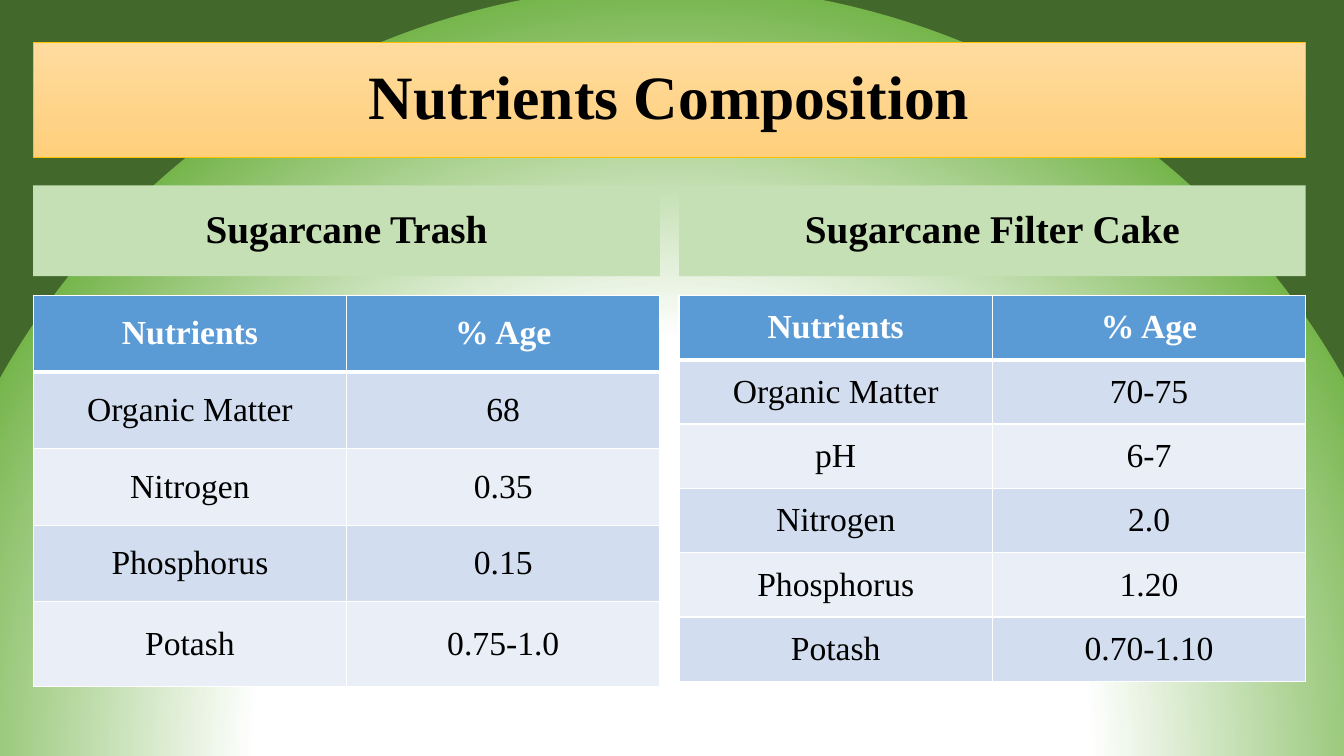
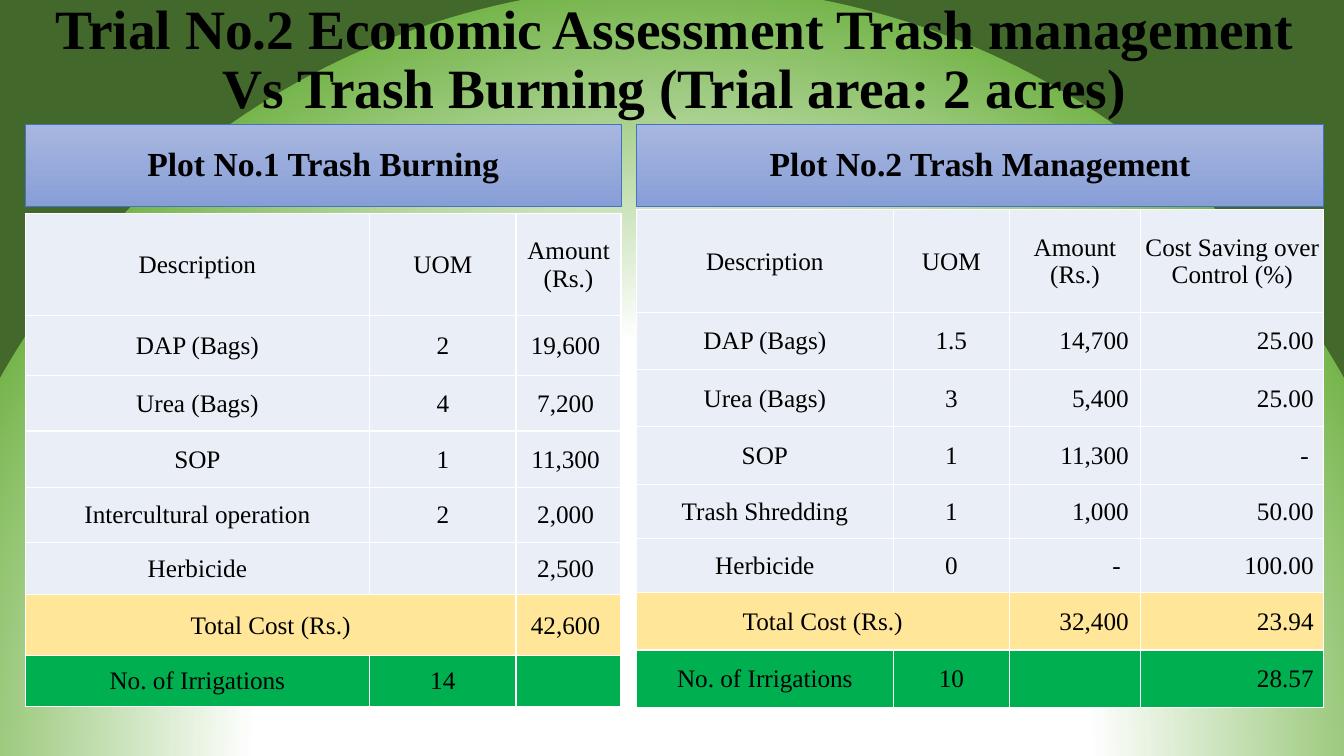
from dataclasses import dataclass
from lxml import etree
from pptx import Presentation
from pptx.dml.color import RGBColor
from pptx.enum.shapes import MSO_SHAPE as Shape
from pptx.enum.text import MSO_ANCHOR as Anchor, PP_ALIGN as Align
from pptx.oxml import parse_xml
from pptx.util import Inches, Pt

W, H = 13.33, 7.5
FONT = "Times New Roman"
BLACK, WHITE = "000000", "FFFFFF"
HEADER_BLUE, BAND_BLUE, PALE_BLUE = "5B9BD5", "D2DEEF", "EAEFF7"
TOTAL_YELLOW, IRRIGATION_GREEN, LEAF = "FFE699", "00B050", "C5E0B4"
ORANGE_FADE, BLUE_FADE = ("FFDB9E", "FFD07C"), ("A8B7DF", "889ED7")
GOLD_LINE, BLUE_LINE = "FFC000", "4472C4"
NS_A = "http://schemas.openxmlformats.org/drawingml/2006/main"
NS_P = "http://schemas.openxmlformats.org/presentationml/2006/main"


@dataclass
class Box:
    x: float
    y: float
    w: float
    h: float

    def inches(self):
        return [Inches(v) for v in (self.x, self.y, self.w, self.h)]

    def split(self, gap, left_share=0.5):
        """Two boxes side by side with a gap between them."""
        left = (self.w - gap) * left_share
        right = self.w - gap - left
        return (Box(self.x, self.y, left, self.h),
                Box(self.x + left + gap, self.y, right, self.h))


@dataclass
class Column:
    weight: float
    align: Align = Align.CENTER
    right_margin: float = 0.01
    dash_margin: float = 0.01


def color(hex_code):
    return RGBColor.from_string(hex_code)


def set_background(master):
    """Green halo around a white centre, shared by every slide."""
    stops = "".join(
        f'<a:gs pos="{pos}000"><a:srgbClr val="{tone}">{alpha}</a:srgbClr></a:gs>'
        for pos, tone, alpha in ((54, WHITE, '<a:alpha val="70000"/>'),
                                 (100, "76B54C", ""), (100, "43682B", "")))
    halo = parse_xml(
        f'<a:gradFill xmlns:a="{NS_A}" rotWithShape="1"><a:gsLst>{stops}</a:gsLst>'
        '<a:path path="circle"><a:fillToRect l="50000" t="130000" r="50000" '
        'b="-30000"/></a:path></a:gradFill>')
    master.background.fill.solid()
    bg_pr = master.element.find(f".//{{{NS_P}}}bgPr")
    bg_pr.replace(bg_pr[0], halo)


def write(frame, text, size, tone=BLACK, bold=False, align=Align.CENTER, spacing=None):
    paragraph = frame.paragraphs[0]
    paragraph.text = text
    paragraph.alignment = align
    paragraph.line_spacing = spacing
    font = paragraph.font
    font.name, font.size, font.bold = FONT, Pt(size), bold
    font.color.rgb = color(tone)


def add_band(slide, box, text, size, fill=None, line=None):
    """Bold centred heading; fill is one colour, a pair to fade, or None."""
    band = slide.shapes.add_shape(Shape.RECTANGLE, *box.inches())
    band.shadow.inherit = False
    if fill is None:
        band.fill.background()
    elif isinstance(fill, tuple):
        band.fill.gradient()
        band.fill.gradient_angle = 270
        for stop, tone in zip(band.fill.gradient_stops, fill):
            stop.color.rgb = color(tone)
    else:
        band.fill.solid()
        band.fill.fore_color.rgb = color(fill)
    if line:
        band.line.color.rgb = color(line)
        band.line.width = Pt(0.5)
    else:
        band.line.fill.background()
    frame = band.text_frame
    frame.word_wrap = True
    frame.vertical_anchor = Anchor.MIDDLE
    write(frame, text, size, bold=True, spacing=0.9)


def style_cell(cell, fill, top=1, bottom=1):
    """White cell borders, then the fill."""
    tc_pr = cell._tc.get_or_add_tcPr()
    for side, width in (("L", 1), ("R", 1), ("T", top), ("B", bottom)):
        edge = etree.SubElement(tc_pr, f"{{{NS_A}}}ln{side}", w=str(Pt(width)))
        solid = etree.SubElement(edge, f"{{{NS_A}}}solidFill")
        etree.SubElement(solid, f"{{{NS_A}}}srgbClr", val=WHITE)
    cell.fill.solid()
    cell.fill.fore_color.rgb = color(fill)
    cell.vertical_anchor = Anchor.MIDDLE


def add_grid(slide, box, rows, col_weights, row_weights):
    """Plain table whose columns and rows share out the box."""
    table = slide.shapes.add_table(len(rows), len(col_weights), *box.inches()).table
    table.first_row = table.horz_banding = False
    for column, weight in zip(table.columns, col_weights):
        column.width = Inches(box.w * weight / sum(col_weights))
    for row, weight in zip(table.rows, row_weights):
        row.height = Inches(box.h * weight / sum(row_weights))
    return table


def add_nutrient_table(slide, box, rows, row_weights):
    table = add_grid(slide, box, rows, (1, 1), row_weights)
    for r, row in enumerate(rows):
        header = r == 0
        fill = HEADER_BLUE if header else (PALE_BLUE, BAND_BLUE)[r % 2]
        for c, text in enumerate(row):
            cell = table.cell(r, c)
            style_cell(cell, fill, top=3 if r == 1 else 1, bottom=3 if header else 1)
            write(cell.text_frame, text, 24, WHITE if header else BLACK, header)


def add_cost_table(slide, box, rows, columns, row_weights):
    table = add_grid(slide, box, rows, [col.weight for col in columns], row_weights)
    total, irrigation = len(rows) - 2, len(rows) - 1
    fills = {total: TOTAL_YELLOW, irrigation: IRRIGATION_GREEN}
    for r, row in enumerate(rows):
        for c, (text, column) in enumerate(zip(row, columns)):
            cell = table.cell(r, c)
            style_cell(cell, fills.get(r, PALE_BLUE))
            right, align = column.right_margin, column.align
            if r == 0:
                right, align = 0.01, Align.CENTER
            elif text == "-":
                right = column.dash_margin
            cell.margin_left = cell.margin_top = Inches(0.01)
            cell.margin_right, cell.margin_bottom = Inches(right), 0
            write(cell.text_frame, text, 18, align=align)
    table.cell(total, 0).merge(table.cell(total, 1))


def below(box, heading_h, gap, height):
    """Heading box and the table box under it."""
    return (Box(box.x, box.y, box.w, heading_h),
            Box(box.x, box.y + heading_h + gap, box.w, height))


def build_nutrients(slide):
    area = Box(0.33, 1.84, W - 0.71, 4.96)
    add_band(slide, Box(area.x, 0.42, area.w, 1.14), "Nutrients Composition", 44,
             ORANGE_FADE, GOLD_LINE)
    head = ("Nutrients", "% Age")
    panels = (
        ("Sugarcane Trash", 3.88, (0.76, 0.76, 0.76, 0.76, 0.84),
         [head, ("Organic Matter", "68"), ("Nitrogen", "0.35"),
          ("Phosphorus", "0.15"), ("Potash", "0.75-1.0")]),
        ("Sugarcane Filter Cake", 3.83, (1,) * 6,
         [head, ("Organic Matter", "70-75"), ("pH", "6-7"), ("Nitrogen", "2.0"),
          ("Phosphorus", "1.20"), ("Potash", "0.70-1.10")]),
    )
    for half, (title, height, weights, rows) in zip(area.split(0.19), panels):
        heading, grid = below(half, 0.9, 0.19, height)
        add_band(slide, heading, title, 28, LEAF)
        add_nutrient_table(slide, grid, rows, weights)


def build_costs(slide):
    add_band(slide, Box(0.16, 0.13, W - 0.27, 0.95),
             "Trial No.2 Economic Assessment Trash management "
             "Vs Trash Burning (Trial area: 2 acres)", 39.6)
    area = Box(0.25, 1.23, W - 0.45, 5.79)
    head = ("Description", "UOM", "Amount (Rs.)")
    panels = (
        ("Plot No.1 Trash Burning", 0.07, 4.89,
         (Column(3.41), Column(1.45), Column(1.04, right_margin=0.07)),
         (1.01, 0.6, 0.55, 0.56, 0.55, 0.52, 0.6, 0.51),
         [head,
          ("DAP (Bags)", "2", "19,600"),
          ("Urea (Bags)", "4", "7,200"),
          ("SOP", "1", "11,300"),
          ("Intercultural operation", "2", "2,000"),
          ("Herbicide", "", "2,500"),
          ("Total Cost (Rs.)", "", "42,600"),
          ("No. of Irrigations", "14", "")]),
        ("Plot No.2 Trash Management", 0.03, 4.94,
         (Column(2.56), Column(1.15), Column(1.31, Align.RIGHT, 0.12, 0.2),
          Column(1.82, Align.RIGHT, 0.1, 0.15)),
         (1.02, 0.57, 0.57, 0.57, 0.54, 0.54, 0.57, 0.57),
         [head + ("Cost Saving over Control (%)",),
          ("DAP (Bags)", "1.5", "14,700", "25.00"),
          ("Urea (Bags)", "3", "5,400", "25.00"),
          ("SOP", "1", "11,300", "-"),
          ("Trash Shredding", "1", "1,000", "50.00"),
          ("Herbicide", "0", "-", "100.00"),
          ("Total Cost (Rs.)", "", "32,400", "23.94"),
          ("No. of Irrigations", "10", "", "28.57")]),
    )
    plots = area.split(0.15, left_share=5.91 / 12.73)
    for plot, (title, gap, height, columns, weights, rows) in zip(plots, panels):
        heading, grid = below(plot, 0.82, gap, height)
        add_band(slide, heading, title, 24, BLUE_FADE, BLUE_LINE)
        add_cost_table(slide, grid, rows, columns, weights)


def main():
    deck = Presentation()
    deck.slide_width, deck.slide_height = Inches(W), Inches(H)
    set_background(deck.slide_master)
    blank = deck.slide_layouts[6]
    for build in (build_nutrients, build_costs):
        build(deck.slides.add_slide(blank))
    deck.save("out.pptx")


if __name__ == "__main__":
    main()
